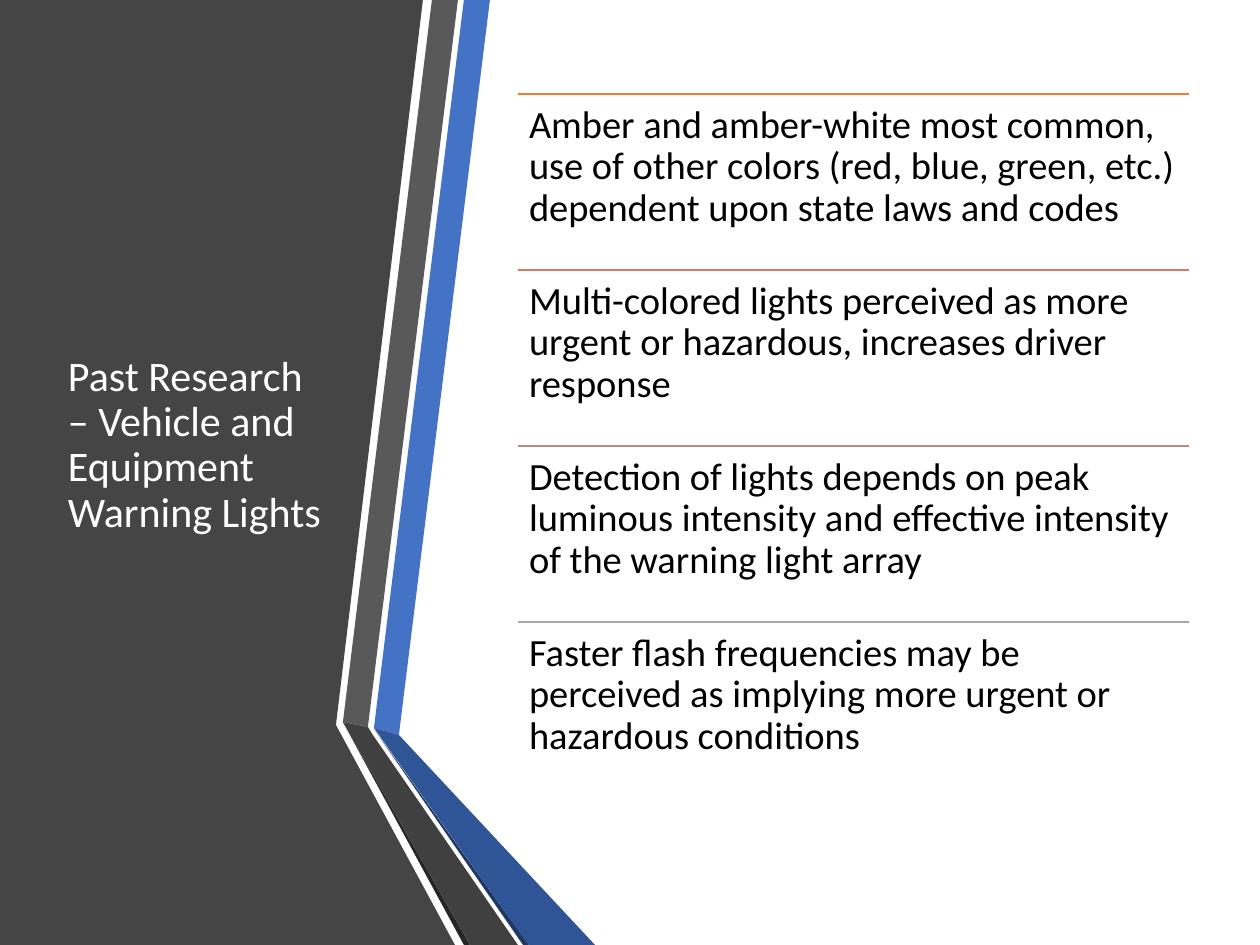
import dataclasses

import pptx
import pptx.dml.color
import pptx.enum.shapes
import pptx.enum.text
import pptx.oxml.ns
import pptx.util
from lxml import etree

EMU_PER_PX = 914400 / 126
PAGE_WIDTH, PAGE_HEIGHT = 1260, 945


def px(length):
    return pptx.util.Emu(round(length * EMU_PER_PX))


def rgb(color):
    return pptx.dml.color.RGBColor.from_string(color)


@dataclasses.dataclass(frozen=True)
class Theme:
    font: str = "Calibri"
    title_size: int = 24
    body_size: int = 22
    line_spacing: float = 0.9
    rule_width: int = 1
    title: str = "FFFFFF"
    body: str = "000000"
    panel: str = "454545"
    blue: str = "4472C4"
    blue_fold: str = "2F5597"
    blue_edge: str = "203864"
    gray: str = "595959"
    gray_fold: str = "404040"
    gray_edge: str = "262626"
    rules: tuple = ("ED7D31", "D17B5C", "B98A82", "A5A5A5")


class SlideBuilder:
    def __init__(self, page, theme):
        self.page = page
        self.theme = theme

    def polygon(self, points, color):
        start, *others = points
        outline = self.page.shapes.build_freeform(*start, scale=EMU_PER_PX)
        outline.add_line_segments(others, close=True)
        shape = outline.convert_to_shape()
        shape.shadow.inherit = False
        shape.fill.solid()
        shape.fill.fore_color.rgb = rgb(color)
        shape.line.fill.background()

    def rule(self, left, top, width, color):
        line = self.page.shapes.add_connector(
            pptx.enum.shapes.MSO_CONNECTOR.STRAIGHT,
            px(left), px(top), px(left + width), px(top))
        line.line.color.rgb = rgb(color)
        line.line.width = pptx.util.Pt(self.theme.rule_width)
        properties = line._element.spPr
        etree.SubElement(properties, pptx.oxml.ns.qn("a:effectLst"))

    def text(self, words, bounds, size, color, inset, anchor):
        box = self.page.shapes.add_textbox(*map(px, bounds))
        frame = box.text_frame
        frame.word_wrap = True
        frame.vertical_anchor = anchor
        frame.margin_left = frame.margin_right = px(inset)
        frame.margin_top = frame.margin_bottom = px(inset)
        para = frame.paragraphs[0]
        para.text = words
        para.line_spacing = self.theme.line_spacing
        para.font.name = self.theme.font
        para.font.size = pptx.util.Pt(size)
        para.font.color.rgb = rgb(color)


def main():
    theme = Theme()
    deck = pptx.Presentation()
    deck.slide_width, deck.slide_height = px(PAGE_WIDTH), px(PAGE_HEIGHT)
    builder = SlideBuilder(deck.slides.add_slide(deck.slide_layouts[6]), theme)
    anchors = pptx.enum.text.MSO_ANCHOR
    bottom = PAGE_HEIGHT

    # Dark title panel and the two folded ribbons beside it
    polygons = [
        (theme.panel, [(0, 0), (423, 0), (336, 725), (455, bottom), (0, bottom)]),
        (theme.blue, [(374, 728), (399, 735), (490, 0), (464, 0)]),
        (theme.gray, [(343, 722), (368, 727), (458, 0), (432, 0)]),
        (theme.gray_edge, [(343, 722), (464, bottom), (470, bottom)]),
        (theme.blue_edge, [(374, 729), (523, bottom), (529, bottom)]),
        (theme.blue_fold, [(374, 728), (529, bottom), (595, bottom), (399, 735)]),
        (theme.gray_fold, [(343, 722), (470, bottom), (518, bottom),
                           (373, 735), (368, 727)]),
    ]
    for color, points in polygons:
        builder.polygon(points, color)

    # Title
    builder.text("Past Research – Vehicle and Equipment Warning Lights",
                 (55, 94, 287, 703), theme.title_size, theme.title,
                 13, anchors.MIDDLE)

    # Findings, each under its own rule
    findings = [
        "Amber and amber-white most common, use of other colors "
        "(red, blue, green, etc.) dependent upon state laws and codes",
        "Multi-colored lights perceived as more urgent or hazardous, "
        "increases driver response",
        "Detection of lights depends on peak luminous intensity and "
        "effective intensity of the warning light array",
        "Faster flash frequencies may be perceived as implying more "
        "urgent or hazardous conditions",
    ]
    left, first_top, width, pitch = 518, 94, 671, 176
    for index, (finding, color) in enumerate(zip(findings, theme.rules)):
        top = first_top + index * pitch
        builder.rule(left, top, width, color)
        builder.text(finding, (left, top, width, pitch), theme.body_size,
                     theme.body, 11, anchors.TOP)

    deck.save("out.pptx")


if __name__ == "__main__":
    main()
